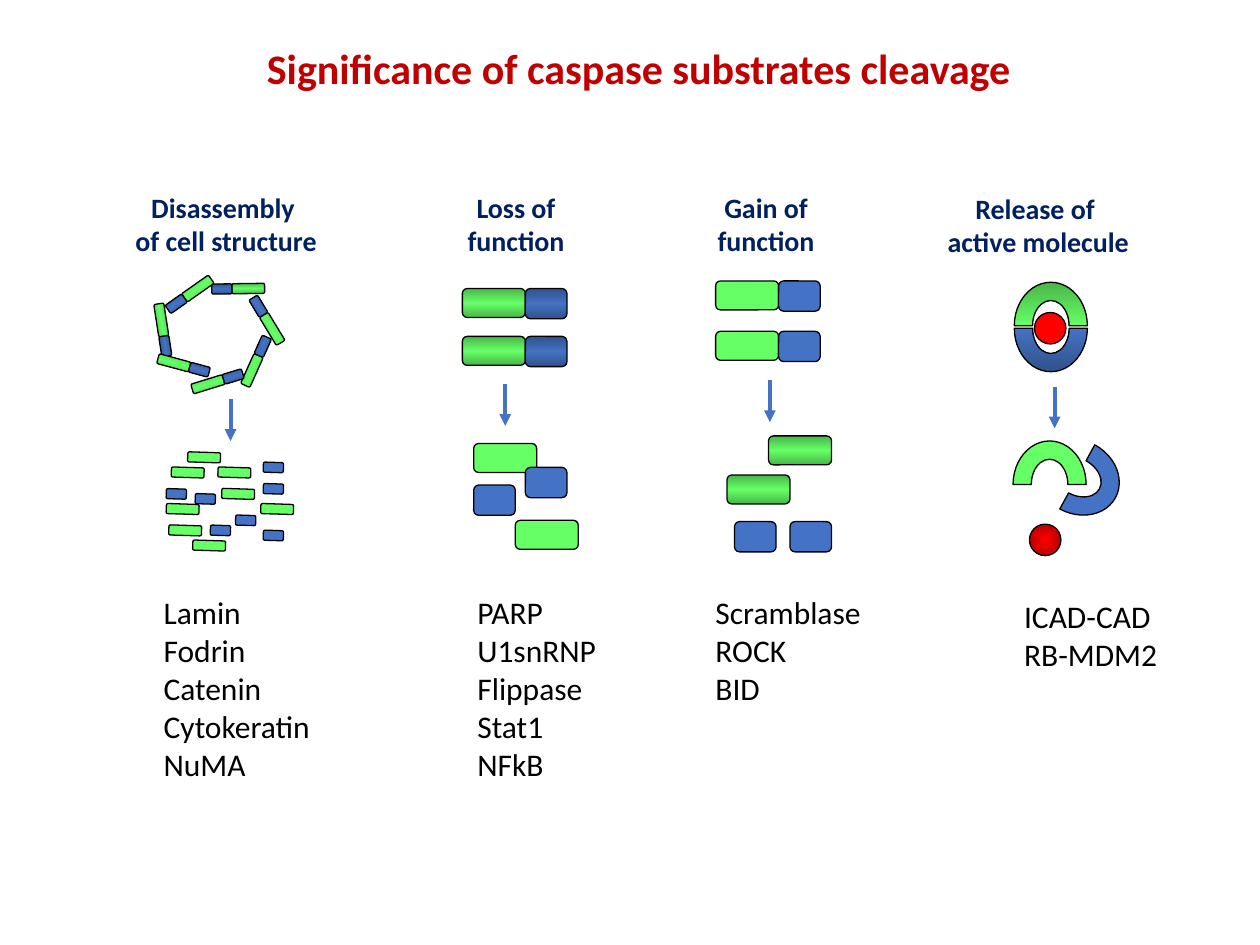
import math
from pptx import Presentation
from pptx import util as u
from pptx.dml.color import RGBColor
from pptx.enum import shapes, text
from pptx.oxml import parse_xml
from pptx.oxml.ns import nsdecls, qn

NAVY = RGBColor(0x00, 0x20, 0x60)
CRIMSON = RGBColor(0xC0, 0x00, 0x00)
BLACK = RGBColor(0x00, 0x00, 0x00)
GREEN = RGBColor(0x66, 0xFF, 0x66)
DARK_GREEN = RGBColor(0x49, 0xB6, 0x49)
BLUE = RGBColor(0x44, 0x72, 0xC4)
DARK_BLUE = RGBColor(0x31, 0x52, 0x8C)
RED = RGBColor(0xFF, 0x00, 0x00)
DARK_RED = RGBColor(0xB6, 0x00, 0x00)

COLUMNS, ROWS = 100, 75
DOMAIN = {GREEN: (5, 2.3), BLUE: (3.3, 2.4)}
SUBUNIT = {GREEN: (2.6, 0.8), BLUE: (1.6, 0.8)}
HALF_RING = (5.8, 6.9)
CORE = (2.5, 2.5)
SHADE = {GREEN: DARK_GREEN, BLUE: DARK_BLUE}
LINEAR = '<a:lin {} ang="5400000" scaled="0"/>'
RADIAL = ('<a:path {} path="shape"><a:fillToRect l="50000" t="50000" '
          'r="50000" b="50000"/></a:path>')


def write(frame, lines, size=18, color=BLACK, bold=False, align=text.PP_ALIGN.LEFT):
    """Fill a text frame with one paragraph per line."""
    frame.word_wrap = True
    for index, line in enumerate(lines):
        paragraph = frame.paragraphs[0] if index == 0 else frame.add_paragraph()
        paragraph.alignment = align
        run = paragraph.add_run()
        run.text = line
        run.font.name = "Calibri"
        run.font.size = u.Pt(size)
        run.font.bold = bold
        run.font.color.rgb = color


class Diagram:
    """Draws styled elements on a slide, measured in grid columns and rows."""

    def __init__(self, deck):
        self.slide = deck.slides.add_slide(deck.slide_layouts[6])
        self.column = deck.slide_width / COLUMNS
        self.row = deck.slide_height / ROWS

    def place(self, x, y):
        return round(x * self.column), round(y * self.row)

    def label(self, spot, extent, lines, **style):
        box = self.slide.shapes.add_textbox(*self.place(*spot), *self.place(*extent))
        write(box.text_frame, lines, **style)

    def figure(self, kind, spot, extent, color, turn=0):
        form = self.slide.shapes.add_shape(kind, *self.place(*spot), *self.place(*extent))
        form.rotation = turn
        form.shadow.inherit = False
        form.fill.solid()
        form.fill.fore_color.rgb = color
        form.line.color.rgb = BLACK
        form.line.width = u.Pt(0.75)
        return form

    def blend(self, form, stops, direction):
        form.fill.gradient()
        gradient = form._element.spPr.find(qn("a:gradFill"))
        for child in list(gradient):
            gradient.remove(child)
        marks = "".join(
            f'<a:gs pos="{share * 1000}"><a:srgbClr val="{color}"/></a:gs>'
            for share, color in stops)
        space = nsdecls("a")
        gradient.append(parse_xml(f"<a:gsLst {space}>{marks}</a:gsLst>"))
        gradient.append(parse_xml(direction.format(space)))

    def piece(self, spot, extent, color, shaded=False, turn=0,
              kind=shapes.MSO_SHAPE.ROUNDED_RECTANGLE):
        form = self.figure(kind, spot, extent, color, turn)
        if shaded:
            edge = SHADE[color]
            self.blend(form, [(0, edge), (50, color), (100, edge)], LINEAR)

    def protein(self, x, y, shaded):
        self.piece((x, y), DOMAIN[GREEN], GREEN, shaded)
        self.piece((x + DOMAIN[GREEN][0], y), DOMAIN[BLUE], BLUE, shaded)

    def filament(self, x, y, turn):
        angle = math.radians(turn)
        for color, reach in ((GREEN, 0), (BLUE, 2.1)):
            wide, high = SUBUNIT[color]
            spot = (x + reach * math.cos(angle) - wide / 2,
                    y + reach * math.sin(angle) - high / 2)
            self.piece(spot, SUBUNIT[color], color, True, turn)

    def arrow(self, x, y):
        line = self.slide.shapes.add_connector(
            shapes.MSO_CONNECTOR.STRAIGHT, *self.place(x, y), *self.place(x, y + 3.3))
        line.line.color.rgb = BLUE
        line.line.width = u.Pt(2.25)
        space = nsdecls("a")
        line.line._get_or_add_ln().append(parse_xml(f'<a:tailEnd {space} type="triangle"/>'))
        line._element.spPr.append(parse_xml(f"<a:effectLst {space}/>"))


def draw_disassembly(diagram):
    """Ring of filaments that falls apart into subunits."""
    ring = [(12.8, 25.4, 81.2), (20, 29.4, 294.1), (19.7, 22.9, 179.2),
            (21.6, 26.1, 238.8), (16.5, 30.5, 342.9), (13.8, 28.8, 15.1),
            (15.7, 22.9, 144.9)]
    for x, y, turn in ring:
        diagram.filament(x, y, turn)
    debris = {
        BLUE: [(15.5, 39.2), (20.9, 36.7), (18.7, 40.9), (20.9, 38.4),
               (16.7, 41.7), (13.2, 38.8), (20.9, 42.1)],
        GREEN: [(13.6, 37.1), (20.7, 40), (17.3, 37.1), (13.2, 40),
                (17.6, 38.8), (14.9, 35.9), (13.4, 41.7), (15.3, 42.9)],
    }
    for color, spots in debris.items():
        for spot in spots:
            diagram.piece(spot, SUBUNIT[color], color, turn=1.8)
    diagram.arrow(18.3, 31.7)


def draw_cleavage(diagram, proteins, active, fragments, arrow):
    """Two-domain proteins above and their separated domains below."""
    for x, y in proteins:
        diagram.protein(x, y, active)
    for color, x, y in fragments:
        diagram.piece((x, y), DOMAIN[color], color, color == GREEN and not active)
    diagram.arrow(*arrow)


def draw_release(diagram):
    """Core held by two half rings, then set free."""
    halves = [((80.5, 22.4), GREEN, True, 0), ((80.5, 22.6), BLUE, True, 180),
              ((80.4, 35), GREEN, False, 0), ((82.6, 34.4), BLUE, False, 118.6)]
    for spot, color, shaded, turn in halves:
        diagram.piece(spot, HALF_RING, color, shaded, turn, shapes.MSO_SHAPE.BLOCK_ARC)
    diagram.figure(shapes.MSO_SHAPE.OVAL, (82.1, 24.8), CORE, RED)
    freed = diagram.figure(shapes.MSO_SHAPE.OVAL, (81.7, 41.6), CORE, RED)
    diagram.blend(freed, [(0, RED), (100, DARK_RED)], RADIAL)
    diagram.arrow(83.7, 30.7)


def main():
    """Build the slide."""
    deck = Presentation()
    deck.slide_width, deck.slide_height = u.Inches(10), u.Inches(7.5)
    diagram = Diagram(deck)
    diagram.label((20.2, 2.9), (61.7, 5), ["Significance of caspase substrates cleavage"],
                  size=24, color=CRIMSON, bold=True)

    headings = [(8.5, 14.6, 18.9, ["Disassembly ", "of cell structure"]),
                (35.2, 14.6, 11.5, ["Loss of function"]),
                (55.5, 14.6, 10.6, ["Gain of function"]),
                (73.5, 14.7, 17.8, ["Release of ", "active molecule"])]
    for x, y, wide, lines in headings:
        diagram.label((x, y), (wide, 6.4), lines, size=16, color=NAVY, bold=True,
                      align=text.PP_ALIGN.CENTER)

    draw_disassembly(diagram)
    draw_cleavage(diagram, [(36.7, 22.9), (36.7, 26.7)], True,
                  [(GREEN, 37.6, 35.2), (BLUE, 41.7, 37.1),
                   (BLUE, 37.6, 38.5), (GREEN, 40.9, 41.3)], (40.1, 30.5))
    draw_cleavage(diagram, [(56.8, 22.3), (56.8, 26.3)], False,
                  [(GREEN, 61, 34.6), (GREEN, 57.7, 37.7),
                   (BLUE, 62.7, 41.4), (BLUE, 58.3, 41.4)], (61.1, 30.2))
    draw_release(diagram)

    substrates = [(12, 46.6, 14.2, ["Lamin", "Fodrin", "Catenin", "Cytokeratin", "NuMA"]),
                  (36.9, 46.6, 11.5, ["PARP", "U1snRNP", "Flippase", "Stat1", "NFkB"]),
                  (55.8, 46.6, 15, ["Scramblase", "ROCK", "BID"]),
                  (80.3, 46.9, 15, ["ICAD-CAD", "RB-MDM2"])]
    for x, y, wide, names in substrates:
        diagram.label((x, y), (wide, 1 + 3.04 * len(names)), names)

    deck.save("out.pptx")


if __name__ == "__main__":
    main()
